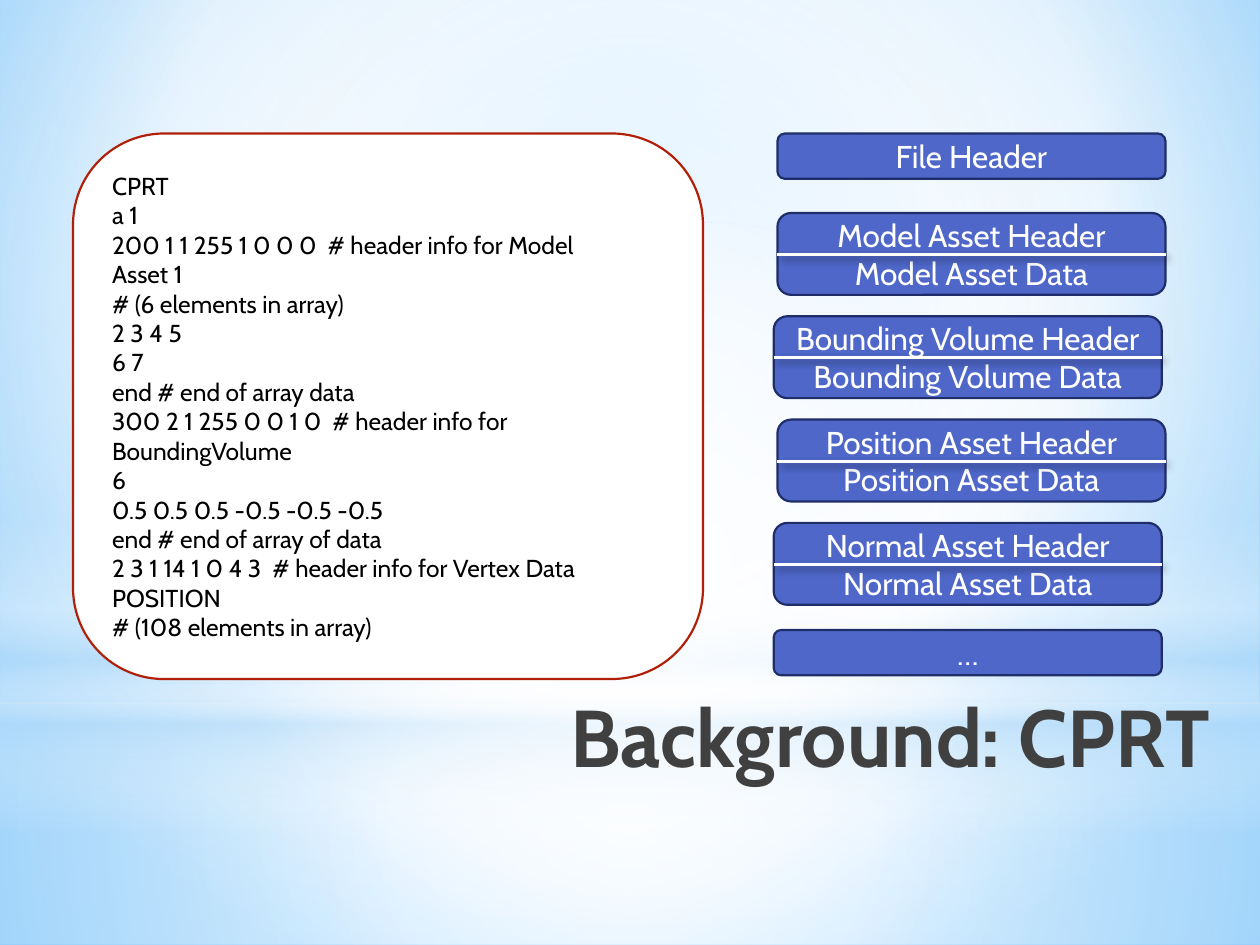
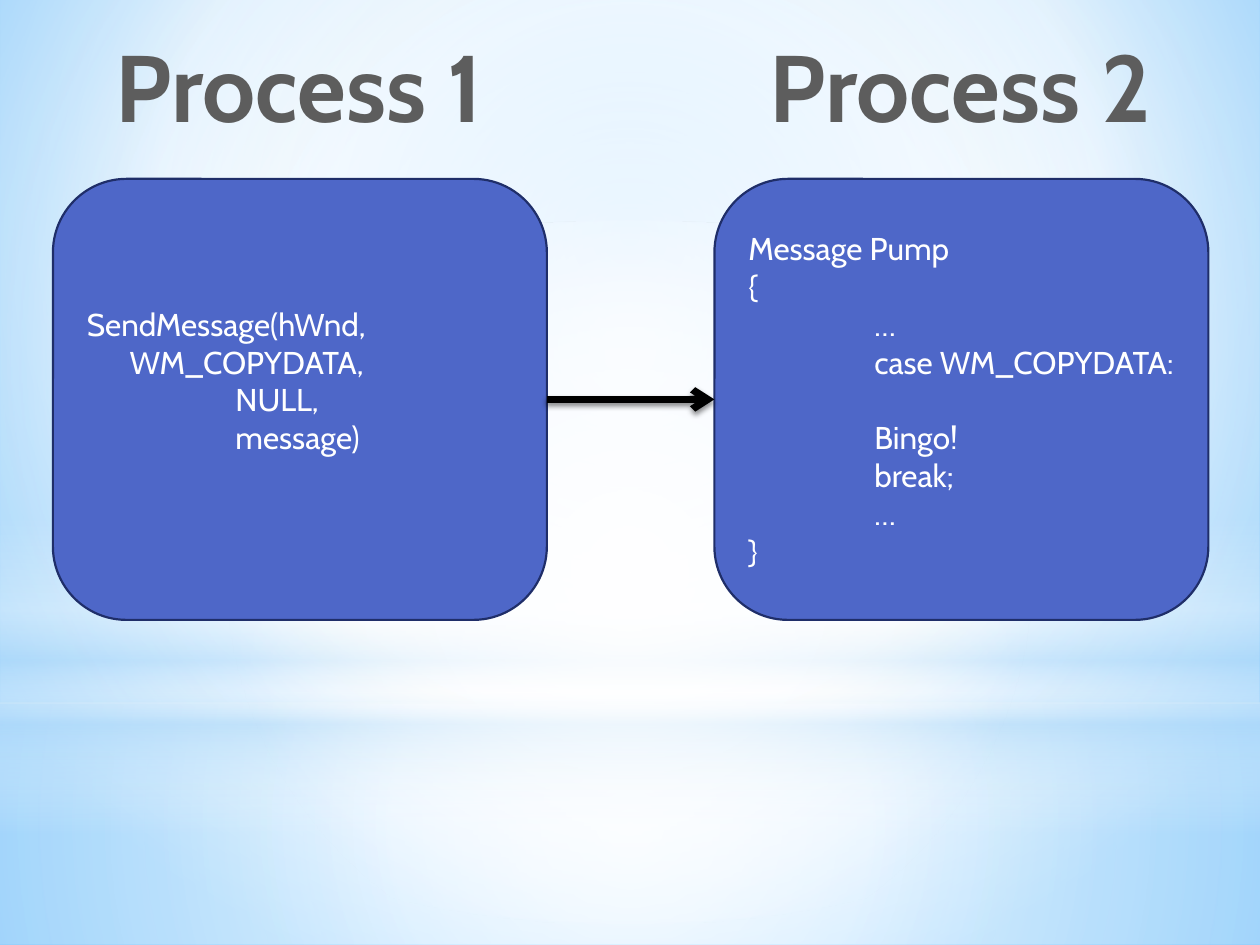
from lxml import etree
from pptx import Presentation
from pptx.dml.color import RGBColor
from pptx.enum import shapes, text
from pptx.oxml import ns, parse_xml
from pptx.util import Inches, Pt

FONT = "Cabin"
WHITE = RGBColor(0xFF, 0xFF, 0xFF)
BLACK = RGBColor(0, 0, 0)
BLUE = RGBColor(0x4E, 0x67, 0xC8)
NAVY = RGBColor(0x1F, 0x2E, 0x69)
RED = RGBColor(0xB0, 0x1F, 0x07)
TITLE_GREY = RGBColor(0x40, 0x40, 0x40)
HEADING_GREY = RGBColor(0x5D, 0x5D, 0x5D)
SKY = RGBColor(0xB4, 0xDC, 0xFA)
SKY_LEFT = RGBColor(0x9E, 0xD5, 0xFF)
SKY_EDGE = RGBColor(0x5B, 0xB9, 0xFF)

LEFT, CENTER, RIGHT = text.PP_ALIGN.LEFT, text.PP_ALIGN.CENTER, text.PP_ALIGN.RIGHT
RECT, OVAL = shapes.MSO_SHAPE.RECTANGLE, shapes.MSO_SHAPE.OVAL
CENTERED = (50, 50, 50, 50)

# Bands of the backdrop: shape, box, stops (position, colour, opacity), focus
BANDS = [
    (RECT, (0, 5.58, 10, 1.92), [(0, WHITE, 91), (37, WHITE, 76), (100, SKY, 79)], CENTERED),
    (RECT, (0, 0, 10, 5.58), [(0, WHITE, 89), (48, WHITE, 62), (100, SKY, 79)], CENTERED),
    (RECT, (0, 4.12, 10, 2.5), [(0, WHITE, 0), (29, WHITE, 30), (45, SKY, 40),
                                (55, WHITE, 26), (65, SKY, 60), (100, WHITE, 0)], None),
    (OVAL, (0, 1.75, 10, 5.58), [(0, WHITE, 100), (56, WHITE, 0)], CENTERED),
]

CPRT_LINES = [
    "CPRT",
    "a 1",
    "200 1 1 255 1 0 0 0  # header info for Model",
    "Asset 1",
    "# (6 elements in array)",
    "2 3 4 5",
    "6 7",
    "end # end of array data",
    "300 2 1 255 0 0 1 0  # header info for BoundingVolume",
    "6",
    "0.5 0.5 0.5 -0.5 -0.5 -0.5",
    "end # end of array of data",
    "2 3 1 14 1 0 4 3  # header info for Vertex Data",
    "POSITION",
    "# (108 elements in array)",
]
ASSETS = ["Model Asset", "Bounding Volume", "Position Asset", "Normal Asset"]
ASSET_X = (6.17, 6.14)
ASSET_W = 3.08


def gradient(fill, owner, stops, focus):
    """Fill owner's XML with a gradient: circular around focus, or vertical."""
    fill.solid()
    stop_xml = "".join(
        f'<a:gs pos="{pos * 1000}"><a:srgbClr val="{color}">'
        f'<a:alpha val="{opacity * 1000}"/></a:srgbClr></a:gs>'
        for pos, color, opacity in stops)
    if focus:
        sides = " ".join(f'{side}="{v * 1000}"' for side, v in zip("ltrb", focus))
        course = f'<a:path path="circle"><a:fillToRect {sides}/></a:path>'
    else:
        course = '<a:lin ang="5400000" scaled="0"/>'
    solid = owner.find(".//" + ns.qn("a:solidFill"))
    solid.getparent().replace(solid, parse_xml(
        f'<a:gradFill {ns.nsdecls("a")} rotWithShape="1">'
        f'<a:gsLst>{stop_xml}</a:gsLst>{course}</a:gradFill>'))


def new_slide(prs):
    s = prs.slides.add_slide(prs.slide_layouts[6])
    gradient(s.background.fill, s.element,
             [(0, SKY_LEFT, 100), (60, WHITE, 100), (100, SKY_EDGE, 100)], (20, 10, 20, 60))
    for kind, box, stops, focus in BANDS:
        sp = s.shapes.add_shape(kind, *map(Inches, box))
        sp.shadow.inherit = False
        sp.line.fill.background()
        gradient(sp.fill, sp.element, stops, focus)
    return s


def write(tf, lines, size, color, align, bold=False):
    for i, line in enumerate(lines):
        p = tf.paragraphs[0] if i == 0 else tf.add_paragraph()
        p.text = line
        p.alignment = align
        p.font.name = FONT
        p.font.size = Pt(size)
        p.font.bold = bold
        p.font.color.rgb = color


def add_heading(s, box, line, size, color, align, wrap):
    tf = s.shapes.add_textbox(*map(Inches, box)).text_frame
    tf.word_wrap = wrap
    write(tf, [line], size, color, align, bold=True)


def add_box(parent, box, lines, size=18, align=CENTER, fill=BLUE, line=NAVY, color=WHITE):
    sp = parent.shapes.add_shape(shapes.MSO_SHAPE.ROUNDED_RECTANGLE, *map(Inches, box))
    sp.shadow.inherit = False
    sp.fill.solid()
    sp.fill.fore_color.rgb = fill
    sp.line.color.rgb = line
    sp.line.width = Pt(1.25)
    sp.text_frame.word_wrap = True
    sp.text_frame.vertical_anchor = text.MSO_ANCHOR.MIDDLE
    write(sp.text_frame, lines, size, color, align)
    return sp


def add_line(parent, start, end, color, width, shadow):
    """Draw a line with a shadow of (opacity, blur, distance, angle)."""
    c = parent.shapes.add_connector(shapes.MSO_CONNECTOR.STRAIGHT, *map(Inches, start + end))
    c.line.color.rgb = color
    c.line.width = Pt(width)
    opacity, blur, dist, angle = shadow
    c.element.spPr.append(parse_xml(
        f'<a:effectLst {ns.nsdecls("a")}><a:outerShdw blurRad="{Pt(blur)}" dist="{Pt(dist)}" '
        f'dir="{angle * 60000}" rotWithShape="0"><a:srgbClr val="{BLACK}">'
        f'<a:alpha val="{opacity * 1000}"/></a:srgbClr></a:outerShdw></a:effectLst>'))
    return c


def add_asset(s, x, y, name):
    """Group a header and data box with its dividing line."""
    group = s.shapes.add_group_shape()
    add_box(group, (x, y, ASSET_W, 0.65), [name + " Header", name + " Data"])
    add_line(group, (x, y + 0.33), (x + ASSET_W, y + 0.33), WHITE, 1.75, (40, 4, 3, 45))


def add_process(s, x, title, lines):
    """Draw a titled process; lines are (indent in inches, code)."""
    add_heading(s, (x + 0.18, 0.17, 3.55, 1.01), title, 54, HEADING_GREY, CENTER, False)
    sp = add_box(s, (x, 1.42, 3.92, 3.5), [code for _, code in lines], align=LEFT)
    sp.text_frame.margin_right = 0
    for p, (indent, _) in zip(sp.text_frame.paragraphs, lines):
        p._p.get_or_add_pPr().set("marL", str(Inches(indent)))
    return sp


def cprt_slide(prs):
    s = new_slide(prs)
    add_heading(s, (2.58, 5.4, 7.12, 1.25), "Background: CPRT", 46, TITLE_GREY, RIGHT, True)
    add_box(s, (0.58, 1.06, 5, 4.33), CPRT_LINES, 14, LEFT, WHITE, RED, BLACK)
    add_box(s, (ASSET_X[0], 1.06, ASSET_W, 0.36), ["File Header"])
    for i, name in enumerate(ASSETS):
        add_asset(s, ASSET_X[i % 2], 1.69 + 0.82 * i, name)
    add_box(s, (ASSET_X[1], 5, ASSET_W, 0.36), ["…"])


def message_slide(prs):
    s = new_slide(prs)
    sender = add_process(s, 0.42, "Process 1", [
        (0, "SendMessage(hWnd,"), (0.34, "WM_COPYDATA,"), (1.18, "NULL,"), (1.18, "message)")])
    sender.text_frame.margin_bottom = Inches(0.35)
    receiver = add_process(s, 5.67, "Process 2", [
        (0, "Message Pump"), (0, "{"), (1, "…"), (1, "case WM_COPYDATA:"),
        (1, "Bingo!"), (1, "break;"), (1, "…"), (0, "}")])
    receiver.text_frame.paragraphs[4].space_before = Pt(21.7)
    arrow = add_line(s, (4.34, 3.17), (5.67, 3.17), BLACK, 4, (45, 3.1, 1.8, 90))
    arrow.begin_connect(sender, 3)
    arrow.end_connect(receiver, 1)
    etree.SubElement(arrow.line._get_or_add_ln(), ns.qn("a:tailEnd"), type="arrow")


def main():
    prs = Presentation()
    prs.slide_width, prs.slide_height = Inches(10), Inches(7.5)
    cprt_slide(prs)
    message_slide(prs)
    prs.save("out.pptx")


if __name__ == "__main__":
    main()
